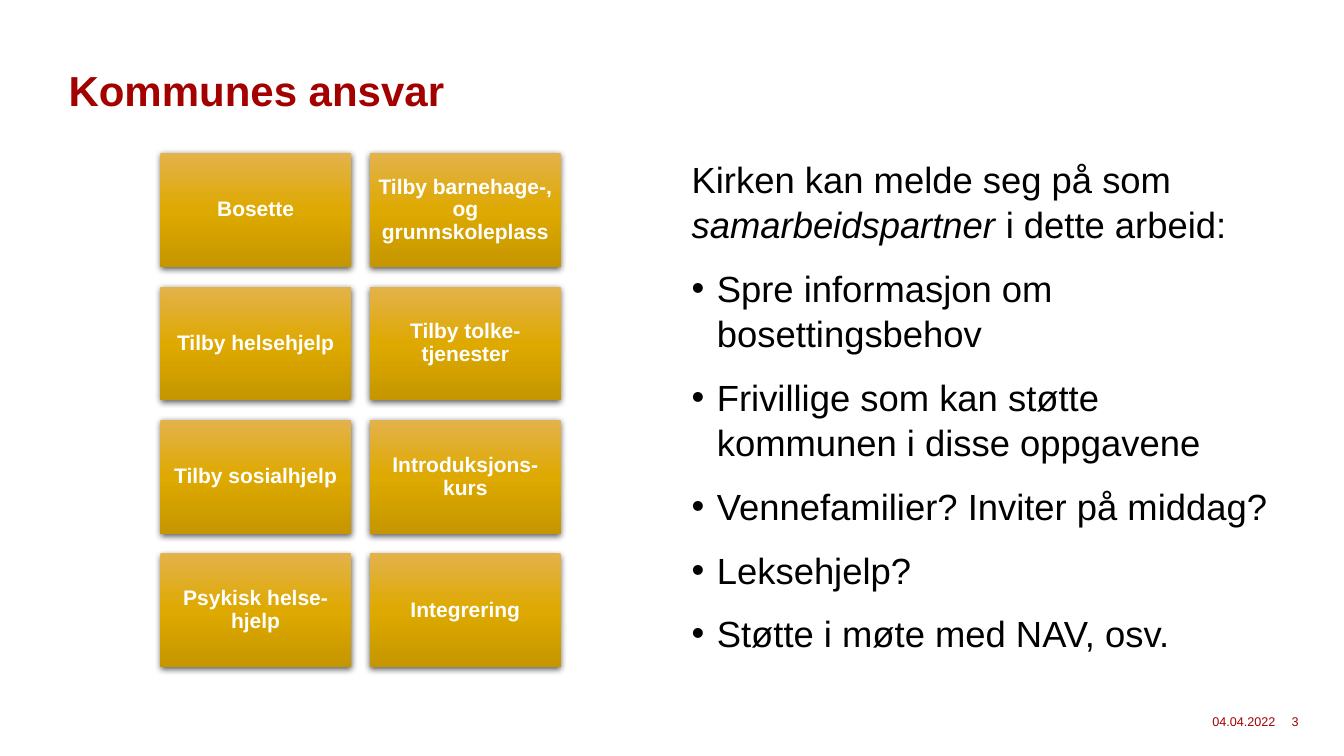
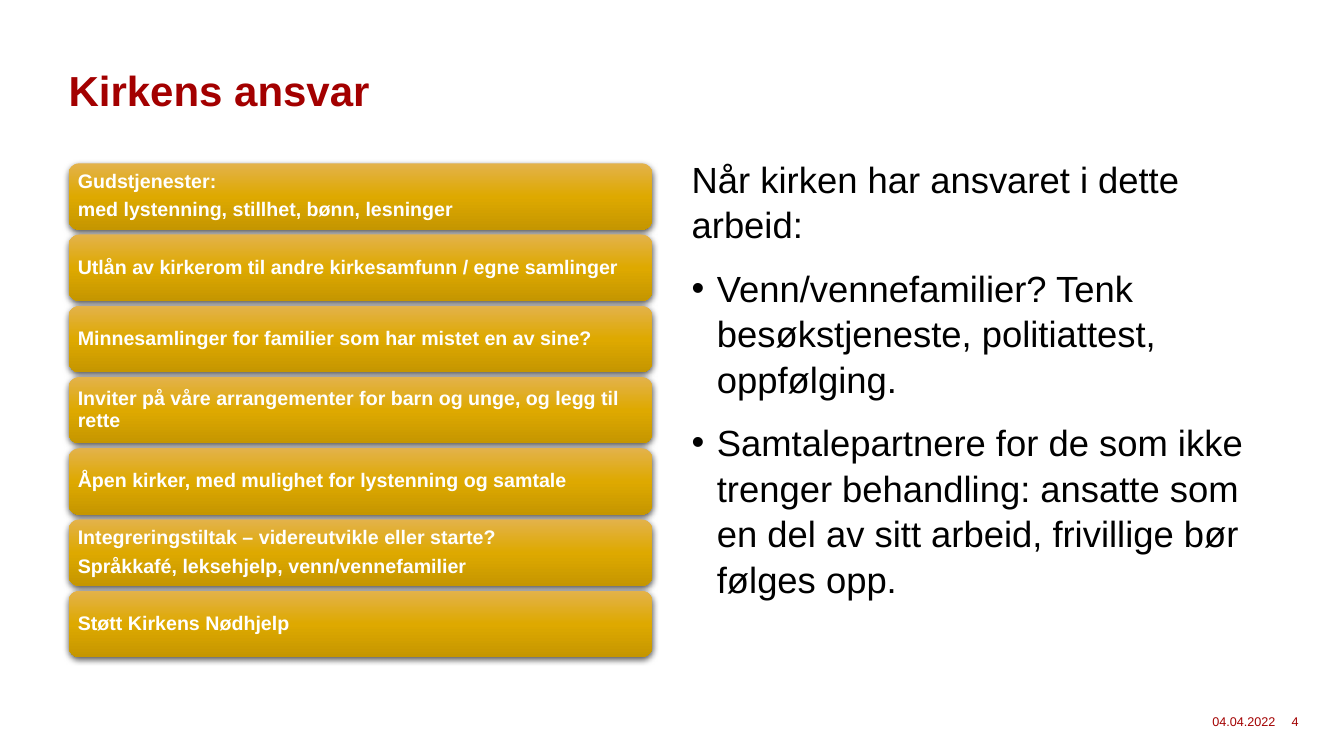
import pptx
import pptx.util
import pptx.dml.color
import pptx.enum.shapes
import pptx.enum.text
import pptx.oxml
import pptx.oxml.ns

Inches, Pt = pptx.util.Inches, pptx.util.Pt
SHAPE = pptx.enum.shapes.MSO_SHAPE
ANCHOR = pptx.enum.text.MSO_ANCHOR
ALIGN = pptx.enum.text.PP_ALIGN

RED, BLACK, WHITE = "A30000", "000000", "FFFFFF"
GOLD = [(0, "E3B24B"), (50, "DEA900"), (100, "C59600")]
FONT = "Arial"
DATE = "04.04.2022"

# Tiles: left and top of the first one, left and top of the last one, and size
SLIDES = [
    dict(
        number=3,
        title="Kommunes ansvar",
        intro=[("Kirken kan melde seg på som ", False),
               ("samarbeidspartner ", True),
               ("i dette arbeid:", False)],
        bullets=["Spre informasjon om bosettingsbehov",
                 "Frivillige som kan støtte kommunen i disse oppgavene",
                 "Vennefamilier? Inviter på middag?",
                 "Leksehjelp?",
                 "Støtte i møte med NAV, osv."],
        tiles=[["Bosette"], ["Tilby barnehage-, og grunnskoleplass"],
               ["Tilby helsehjelp"], ["Tilby tolke-tjenester"],
               ["Tilby sosialhjelp"], ["Introduksjons-kurs"],
               ["Psykisk helse-hjelp"], ["Integrering"]],
        layout=dict(shape=SHAPE.RECTANGLE, columns=2, first=(1.59, 1.52),
                    last=(3.67, 5.49), size=(1.89, 1.13),
                    text_size=15, align=ALIGN.CENTER),
    ),
    dict(
        number=4,
        title="Kirkens ansvar",
        intro=[("Når kirken har ansvaret i dette arbeid:", False)],
        bullets=["Venn/vennefamilier? Tenk besøkstjeneste, politiattest, oppfølging.",
                 "Samtalepartnere for de som ikke trenger behandling: ansatte som "
                 "en del av sitt arbeid, frivillige bør følges opp."],
        tiles=[["Gudstjenester:", "med lystenning, stillhet, bønn, lesninger"],
               ["Utlån av kirkerom til andre kirkesamfunn / egne samlinger"],
               ["Minnesamlinger for familier som har mistet en av sine?"],
               ["Inviter på våre arrangementer for barn og unge, og legg til rette"],
               ["Åpen kirker, med mulighet for lystenning og samtale"],
               ["Integreringstiltak – videreutvikle eller starte?",
                "Språkkafé, leksehjelp, venn/vennefamilier"],
               ["Støtt Kirkens Nødhjelp"]],
        layout=dict(shape=SHAPE.ROUNDED_RECTANGLE, columns=1, first=(0.68, 1.62),
                    last=(0.68, 5.86), size=(5.79, 0.66),
                    text_size=14, align=ALIGN.LEFT),
    ),
]


def rgb(color):
    return pptx.dml.color.RGBColor.from_string(color)


def xml(text):
    """Build a drawing element from markup without namespace declarations."""
    tag = text[1:].split(None, 1)[0].split(">")[0].rstrip("/")
    return pptx.oxml.parse_xml(
        text.replace(tag, f"{tag} {pptx.oxml.ns.nsdecls('a')}", 1))


def place(sp, left, top, width, height):
    sp.left, sp.top = Inches(left), Inches(top)
    sp.width, sp.height = Inches(width), Inches(height)


def frame(sp, anchor, inset=0):
    tf = sp.text_frame
    tf.auto_size = pptx.enum.text.MSO_AUTO_SIZE.NONE
    tf.word_wrap = True
    tf.vertical_anchor = anchor
    tf.margin_left = tf.margin_right = tf.margin_top = tf.margin_bottom = Inches(inset)
    return tf


def paragraph(tf, index):
    return tf.paragraphs[0] if index == 0 else tf.add_paragraph()


def add_run(p, text, size, color, bold=False, italic=False):
    r = p.add_run()
    r.text = text
    r.font.name, r.font.size = FONT, Pt(size)
    r.font.bold, r.font.italic = bold, italic
    r.font.color.rgb = rgb(color)


def set_title(s, text):
    sp = s.shapes.title
    place(sp, 0.68, 0.25, 11.97, 0.9)
    p = frame(sp, ANCHOR.BOTTOM).paragraphs[0]
    p.alignment, p.line_spacing = ALIGN.LEFT, 0.9
    add_run(p, text, 30, RED, bold=True)


def set_body(s, intro, bullets):
    sp = s.placeholders[1]
    place(sp, 6.86, 1.54, 5.79, 5.11)
    tf = frame(sp, ANCHOR.TOP)
    for i, runs in enumerate([intro] + [[(text, False)] for text in bullets]):
        p = paragraph(tf, i)
        pPr = p._p.get_or_add_pPr()
        indent = Inches(0.25) if i else 0
        pPr.set("marL", str(indent))
        pPr.set("indent", str(-indent))
        pPr.append(xml('<a:buChar char="•"/>' if i else "<a:buNone/>"))
        p.line_spacing = 1.04
        p.space_before, p.space_after = Pt(10 if i else 0), Pt(3)
        for text, italic in runs:
            add_run(p, text, 26, BLACK, italic=italic)


def add_footer(s, number):
    for text, left, width, align in [(DATE, 11.47, 1.18, ALIGN.RIGHT),
                                     (str(number), 12.81, 0.38, ALIGN.LEFT)]:
        sp = s.shapes.add_textbox(Inches(left), Inches(7.04), Inches(width), Inches(0.23))
        p = frame(sp, ANCHOR.MIDDLE).paragraphs[0]
        p.alignment = align
        add_run(p, text, 9, RED)


def style_tile(sp):
    """Gold gradient from top to bottom, no line, soft shadow below."""
    stops = "".join(f'<a:gs pos="{pos * 1000}"><a:srgbClr val="{color}"/></a:gs>'
                    for pos, color in GOLD)
    sp.line.fill.background()
    spPr = sp._element.spPr
    spPr.find(pptx.oxml.ns.qn("a:prstGeom")).addnext(xml(
        f'<a:gradFill rotWithShape="1"><a:gsLst>{stops}</a:gsLst>'
        '<a:lin ang="5400000" scaled="0"/></a:gradFill>'))
    spPr.append(xml(
        f'<a:effectLst><a:outerShdw blurRad="{Pt(4.5)}" dist="{Pt(1.5)}" dir="5400000" '
        f'algn="ctr" rotWithShape="0"><a:srgbClr val="{BLACK}"><a:alpha val="63000"/>'
        '</a:srgbClr></a:outerShdw></a:effectLst>'))


def add_tiles(s, tiles, shape, columns, first, last, size, text_size, align):
    rows = -(-len(tiles) // columns)
    step_x = (last[0] - first[0]) / max(columns - 1, 1)
    step_y = (last[1] - first[1]) / max(rows - 1, 1)
    for i, lines in enumerate(tiles):
        row, column = divmod(i, columns)
        sp = s.shapes.add_shape(shape, Inches(first[0] + column * step_x),
                                Inches(first[1] + row * step_y),
                                Inches(size[0]), Inches(size[1]))
        style_tile(sp)
        tf = frame(sp, ANCHOR.MIDDLE, 0.06)
        for j, line in enumerate(lines):
            p = paragraph(tf, j)
            p.alignment, p.line_spacing = align, 0.9
            p.space_before = Pt(5 if j else 0)
            add_run(p, line, text_size, WHITE, bold=True)


def main():
    prs = pptx.Presentation()
    prs.slide_width, prs.slide_height = Inches(13.33), Inches(7.5)
    for content in SLIDES:
        s = prs.slides.add_slide(prs.slide_layouts[1])
        set_title(s, content["title"])
        set_body(s, content["intro"], content["bullets"])
        add_footer(s, content["number"])
        add_tiles(s, content["tiles"], **content["layout"])
    prs.save("out.pptx")


if __name__ == "__main__":
    main()
